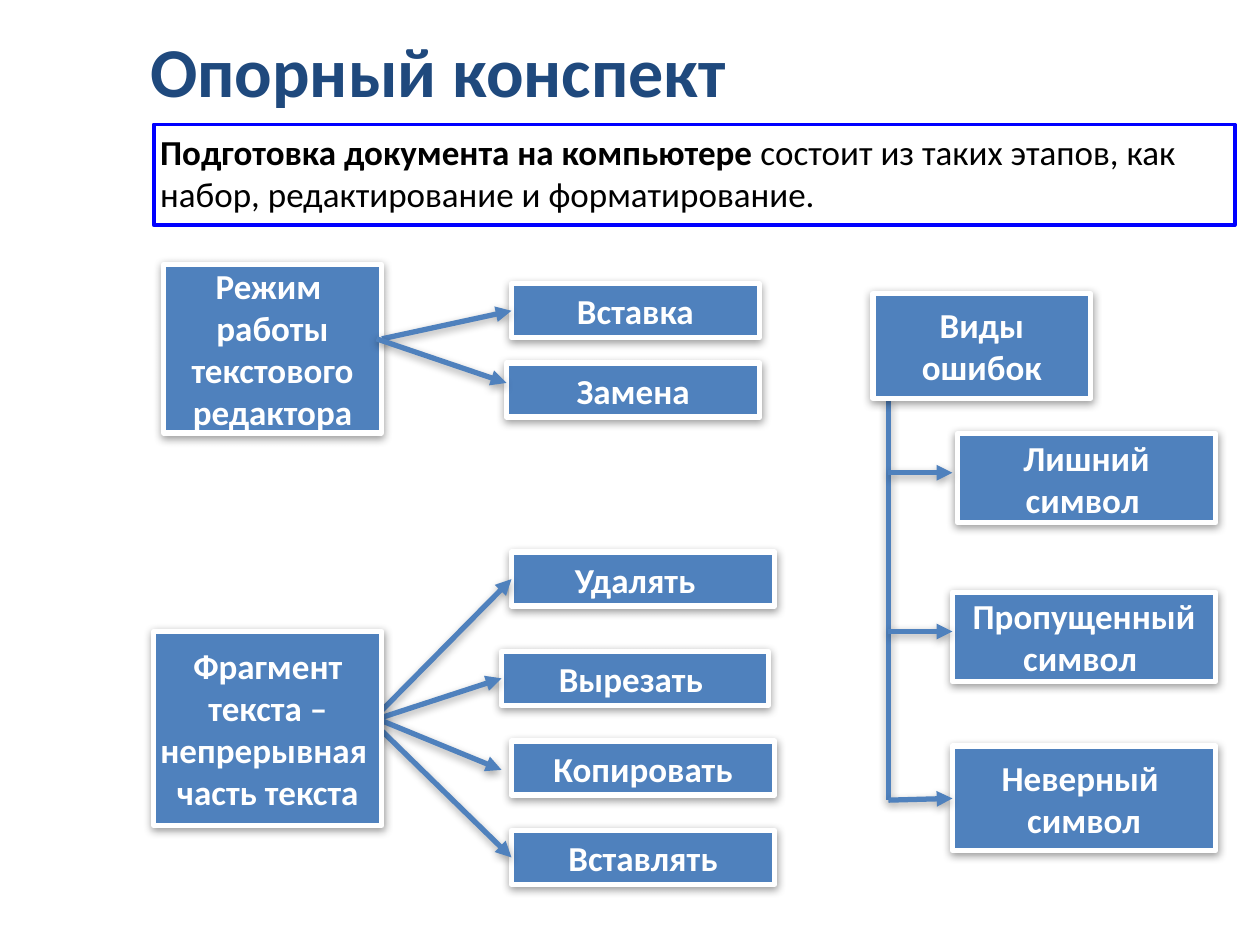
from dataclasses import dataclass
from typing import Optional

from lxml.etree import SubElement
from pptx import Presentation
from pptx.dml.color import RGBColor
from pptx.enum.shapes import MSO_CONNECTOR, MSO_SHAPE
from pptx.enum.text import MSO_ANCHOR, PP_ALIGN
from pptx.oxml.ns import qn
from pptx.util import Cm, Pt


@dataclass(frozen=True)
class Theme:
    font: str = "Calibri"
    blue: RGBColor = RGBColor(0x4F, 0x81, 0xBD)
    navy: RGBColor = RGBColor(0x1F, 0x49, 0x7D)
    frame: RGBColor = RGBColor(0x00, 0x00, 0xFF)
    white: RGBColor = RGBColor(0xFF, 0xFF, 0xFF)
    black: RGBColor = RGBColor(0x00, 0x00, 0x00)
    title_size: int = 40
    body_size: int = 20
    line_width: float = 3
    frame_width: float = 2.25


THEME = Theme()


@dataclass(frozen=True)
class Card:
    text: str
    left: float
    top: float
    width: float
    height: float = 1.09


@dataclass(frozen=True)
class Arrow:
    start: tuple[float, float]
    end: tuple[float, float]
    target: Optional[str] = None
    head: bool = True


MODE = Card("Режим \nработы\nтекстового\nредактора", 3.3, 5.33, 4.39, 3.4)
FRAGMENT = Card("Фрагмент\nтекста –\nнепрерывная \nчасть текста", 3.1, 12.73, 4.6, 3.91)
ERRORS = Card("Виды\n ошибок ", 17.6, 5.92, 4.39, 2.11)
INSERT = Card("Вставка", 10.31, 5.72, 5)
REPLACE = Card("Замена", 10.21, 7.32, 5.11)
EXTRA = Card("Лишний\nсимвол ", 19.3, 8.74, 5.21, 1.8)
MISSING = Card("Пропущенный\nсимвол ", 19.2, 11.94, 5.31, 1.8)
WRONG = Card("Неверный \nсимвол", 19.2, 15.04, 5.31, 2.11)
DELETE = Card("Удалять  ", 10.31, 11.13, 5.31)
CUT = Card("Вырезать ", 10.11, 13.13, 5.38)
COPY = Card("Копировать", 10.31, 14.94, 5.31)
PASTE = Card("Вставлять", 10.31, 16.74, 5.31)

BACK_CARDS = [MODE, INSERT, REPLACE, EXTRA, MISSING, WRONG, DELETE, CUT, COPY, PASTE]
FRONT_CARDS = [ERRORS, FRAGMENT]

TRUNK_X = 17.91
BRANCH_END = 19.2
FRAGMENT_HUB = (7.49, 14.53)

ARROWS = [
    Arrow((7.7, 6.83), (10.41, 6.22), INSERT.text),
    Arrow((7.59, 6.83), (10.21, 7.72)),
    Arrow((TRUNK_X, 8.03), (TRUNK_X, 16.13), head=False),
    Arrow((TRUNK_X, 9.53), (BRANCH_END, 9.53)),
    Arrow((TRUNK_X, 12.73), (BRANCH_END, 12.73)),
    Arrow((TRUNK_X, 16.13), (BRANCH_END, 16.13), WRONG.text),
    Arrow(FRAGMENT_HUB, (10.39, 11.63), DELETE.text),
    Arrow(FRAGMENT_HUB, (10.11, 13.72), CUT.text),
    Arrow((7.7, 14.53), (10.11, 15.52)),
    Arrow(FRAGMENT_HUB, (10.31, 17.32), PASTE.text),
]


def add_shadow(effects, blur: float, distance: float, opacity: int) -> None:
    shadow = SubElement(effects, qn("a:outerShdw"), blurRad=str(Pt(blur)),
                        dist=str(Pt(distance)), dir="5400000", rotWithShape="0")
    color = SubElement(shadow, qn("a:srgbClr"), val="000000")
    SubElement(color, qn("a:alpha"), val=str(opacity * 1000))


def write_text(box, text: str, *, size: int, color: RGBColor, bold: bool = True,
               align=PP_ALIGN.LEFT, anchor=MSO_ANCHOR.MIDDLE,
               inset: float = 0.13, rest: str = "") -> None:
    frame = box.text_frame
    frame.word_wrap = True
    frame.vertical_anchor = anchor
    frame.margin_left = frame.margin_right = Cm(0.13)
    frame.margin_top = frame.margin_bottom = Cm(inset)
    for index, line in enumerate(text.split("\n")):
        para = frame.add_paragraph() if index else frame.paragraphs[0]
        para.alignment = align
        para.font.name = THEME.font
        para.font.size = Pt(size)
        para.font.color.rgb = color
        para.add_run().text = line
        para.runs[0].font.bold = bold
    if rest:
        span = para.add_run()
        span.text = rest
        span.font.bold = False
    for para in frame.paragraphs:
        for span in para.runs:
            span.font.name = THEME.font
            span.font.size = Pt(size)
            span.font.color.rgb = color


def add_box(page, left: float, top: float, width: float, height: float,
            line: RGBColor, line_width: float):
    box = page.shapes.add_shape(MSO_SHAPE.RECTANGLE, Cm(left), Cm(top), Cm(width), Cm(height))
    box.shadow.inherit = False
    box.fill.background()
    box.line.color.rgb = line
    box.line.width = Pt(line_width)
    return box


def add_card(page, card: Card):
    box = add_box(page, card.left, card.top, card.width, card.height,
                  THEME.white, THEME.line_width)
    box.fill.solid()
    box.fill.fore_color.rgb = THEME.blue
    add_shadow(box._element.spPr.find(qn("a:effectLst")), 5, 1.6, 38)
    write_text(box, card.text, size=THEME.body_size, color=THEME.white,
               align=PP_ALIGN.CENTER, inset=0)
    return box


def add_arrow(page, arrow: Arrow, boxes: dict) -> None:
    connector = page.shapes.add_connector(
        MSO_CONNECTOR.STRAIGHT, *map(Cm, arrow.start), *map(Cm, arrow.end))
    if arrow.target:
        connector.end_connect(boxes[arrow.target], 1)
    connector.line.color.rgb = THEME.blue
    connector.line.width = Pt(THEME.line_width)
    if arrow.head:
        SubElement(connector.line._get_or_add_ln(), qn("a:tailEnd"), type="triangle")
    effects = SubElement(connector._element.spPr, qn("a:effectLst"))
    add_shadow(effects, 5, 1.8, 35)


def main() -> None:
    deck = Presentation()
    deck.slide_width, deck.slide_height = Cm(25.4), Cm(19.05)
    page = deck.slides.add_slide(deck.slide_layouts[6])

    boxes = {card.text: add_card(page, card) for card in BACK_CARDS}
    for arrow in ARROWS:
        add_arrow(page, arrow, boxes)
    for card in FRONT_CARDS:
        add_card(page, card)

    title = page.shapes.add_textbox(Cm(2.9), Cm(0.41), Cm(21.23), Cm(1.98))
    write_text(title, "Опорный конспект", size=THEME.title_size, color=THEME.navy)

    summary = add_box(page, 3.1, 2.51, 21.79, 2.03, THEME.frame, THEME.frame_width)
    write_text(summary, "Подготовка документа на компьютере", size=THEME.body_size,
               color=THEME.black, anchor=MSO_ANCHOR.TOP,
               rest=" состоит из таких этапов, как набор, редактирование и форматирование.")

    deck.save("out.pptx")


if __name__ == "__main__":
    main()
